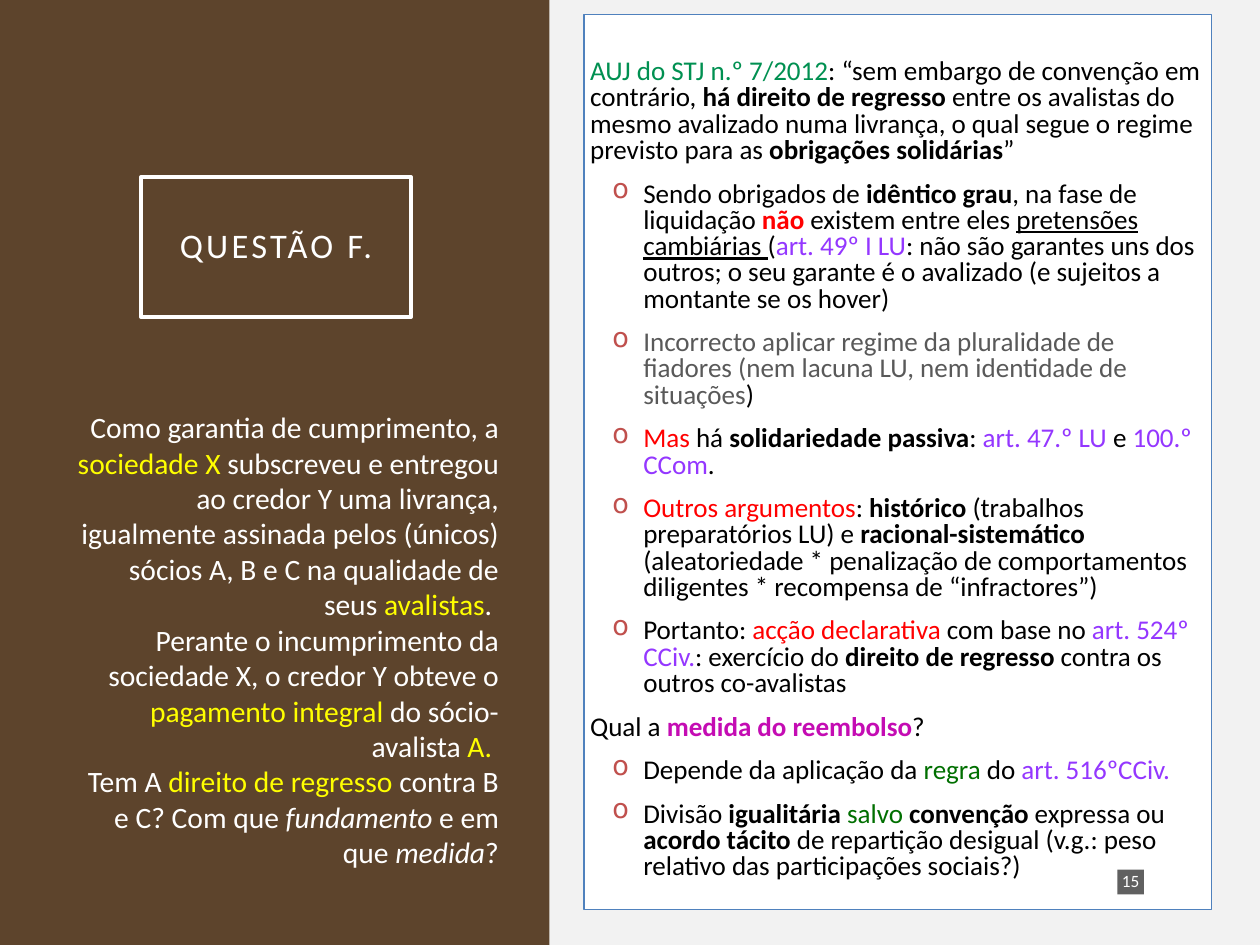
from lxml import etree
from pptx import Presentation
from pptx.dml.color import RGBColor
from pptx.enum.shapes import MSO_SHAPE as Shape
from pptx.enum.text import MSO_ANCHOR as Anchor, PP_ALIGN as Align
from pptx.oxml.ns import qn
from pptx.util import Inches, Pt

FONT = "Calibri"
BROWN, WHITE, BLACK = "5D442C", "FFFFFF", "000000"
RED, PURPLE, YELLOW = "FF0000", "9437FF", "FFFF00"
GREEN, TEAL, GREY, MAGENTA = "006F00", "009051", "595959", "C40CB3"
BULLET_RED = "C0504D"
BOLD, ITALIC, UNDERLINE = "bold", "italic", "underline"

# Each paragraph: (is a bullet, runs); each run: text, or text with styles and colours.
ANSWER = [
    (False, [("AUJ do STJ n.º 7/2012", TEAL), ": “sem embargo de convenção em contrário, ",
             ("há direito de regresso ", BOLD),
             "entre os avalistas do mesmo avalizado numa livrança, "
             "o qual segue o regime previsto para as ",
             ("obrigações solidárias", BOLD), "”"]),
    (True, ["Sendo obrigados de ", ("idêntico grau", BOLD), ", na fase de liquidação ",
            ("não", BOLD, RED), " existem entre eles ",
            ("pretensões cambiárias ", UNDERLINE), "(", ("art. 49º I LU", PURPLE),
            ": não são garantes uns dos outros; o seu garante é o avalizado "
            "(e sujeitos a montante se os hover)"]),
    (True, [("Incorrecto aplicar regime da pluralidade de fiadores "
             "(nem lacuna LU, nem identidade de situações", GREY), ")"]),
    (True, [("Mas", RED), " há ", ("solidariedade passiva", BOLD), ": ",
            ("art. 47.º LU", PURPLE), " e ", ("100.º CCom", PURPLE), "."]),
    (True, [("Outros argumentos", RED), ": ", ("histórico", BOLD),
            " (trabalhos preparatórios LU) e ", ("racional-sistemático", BOLD),
            " (aleatoriedade * penalização de comportamentos diligentes "
            "* recompensa de “infractores”)"]),
    (True, ["Portanto: ", ("acção declarativa ", RED), "com base no ",
            ("art. 524º CCiv.", PURPLE), ": exercício do ",
            ("direito de regresso", BOLD), " contra os outros co-avalistas"]),
    (False, ["Qual a ", ("medida do reembolso", BOLD, MAGENTA), "?"]),
    (True, ["Depende da aplicação da ", ("regra", GREEN), " do ", ("art. 516ºCCiv.", PURPLE)]),
    (True, ["Divisão ", ("igualitária ", BOLD), ("salvo ", GREEN), ("convenção", BOLD),
            " expressa ou ", ("acordo tácito ", BOLD),
            "de repartição desigual (v.g.: peso relativo das participações sociais?)"]),
]

CASE = [
    ["Como garantia de cumprimento, a ", ("sociedade X", YELLOW),
     " subscreveu e entregou ao credor Y uma livrança, igualmente assinada "
     "pelos (únicos) sócios A, B e C na qualidade de seus ", ("avalistas", YELLOW), ". "],
    ["Perante o incumprimento da sociedade X, o credor Y obteve o ",
     ("pagamento integral ", YELLOW), "do sócio-avalista ", ("A. ", YELLOW)],
    ["Tem A ", ("direito de regresso ", YELLOW), "contra B e C? Com que ",
     ("fundamento", ITALIC), " e em que ", ("medida", ITALIC), "?"],
]


def rgb(color):
    return RGBColor.from_string(color)


def add_box(slide, place, fill=None, line=None, line_width=1):
    box = slide.shapes.add_shape(Shape.RECTANGLE, *map(Inches, place))
    box.shadow.inherit = False
    if fill:
        box.fill.solid()
        box.fill.fore_color.rgb = rgb(fill)
    else:
        box.fill.background()
    if line:
        box.line.color.rgb = rgb(line)
        box.line.width = Pt(line_width)
    else:
        box.line.fill.background()
    return box


def set_frame(shape, margin, anchor=Anchor.MIDDLE):
    frame = shape.text_frame
    frame.word_wrap = True
    frame.vertical_anchor = anchor
    frame.margin_left = frame.margin_right = Inches(margin)
    frame.margin_top = frame.margin_bottom = Inches(margin)
    return frame


def add_bullet(paragraph):
    props = paragraph._p.get_or_add_pPr()
    props.set("lvl", "1")
    props.set("marL", str(Inches(0.6)))
    props.set("indent", str(Inches(-0.35)))
    bullet_color = etree.SubElement(props, qn("a:buClr"))
    etree.SubElement(bullet_color, qn("a:srgbClr"), val=BULLET_RED)
    etree.SubElement(props, qn("a:buChar"), char="o")


def add_paragraph(frame, runs, size, color, align=Align.LEFT, spacing=1.0,
                  before=0, bullet=False):
    """Fill the empty first paragraph, or append one with space before it."""
    paragraph = frame.paragraphs[0]
    if paragraph.runs:
        paragraph = frame.add_paragraph()
        paragraph.space_before = Pt(before)
    if bullet:
        add_bullet(paragraph)
    paragraph.alignment = align
    paragraph.line_spacing = spacing
    paragraph.font.name = FONT
    paragraph.font.size = Pt(size)
    paragraph.font.color.rgb = rgb(color)
    for item in runs:
        text, *styles = (item,) if isinstance(item, str) else item
        run = paragraph.add_run()
        run.text = text
        for style in styles:
            if style in (BOLD, ITALIC, UNDERLINE):
                setattr(run.font, style, True)
            else:
                run.font.color.rgb = rgb(style)
    return paragraph


def add_title(slide):
    title = add_box(slide, (1.59, 2, 3.05, 1.58), line=WHITE, line_width=3)
    heading = add_paragraph(set_frame(title, 0.28), ["QUESTÃO F."], 28, WHITE,
                            Align.CENTER, 0.9)
    heading.runs[0].font._element.set("spc", "270")


def add_answer(slide):
    answer = add_box(slide, (6.59, 0.16, 7.08, 10.11), WHITE, "4F81BD")
    frame = set_frame(answer, 0.07)
    frame.margin_top = Inches(0.26)
    for bullet, runs in ANSWER:
        add_paragraph(frame, runs, 22, BLACK, spacing=0.81, before=14, bullet=bullet)


def add_page_number(slide):
    badge = add_box(slide, (12.61, 9.82, 0.3, 0.28), "1D1D1D")
    fill_color = badge._element.spPr.find(qn("a:solidFill"))[0]
    etree.SubElement(fill_color, qn("a:alpha"), val="70000")
    add_paragraph(set_frame(badge, 0.03), ["15"], 14, WHITE, Align.CENTER, 0.9)


def add_case(slide):
    case = slide.shapes.add_textbox(*map(Inches, (0.73, 4.55, 4.97, 5.39)))
    frame = set_frame(case, 0.07, Anchor.TOP)
    for runs in CASE:
        add_paragraph(frame, runs, 24, WHITE, Align.RIGHT)


def main():
    deck = Presentation()
    deck.slide_width, deck.slide_height = Inches(14.22), Inches(10.67)
    slide = deck.slides.add_slide(deck.slide_layouts[6])
    slide.background.fill.solid()
    slide.background.fill.fore_color.rgb = rgb(BROWN)
    add_title(slide)
    add_box(slide, (6.2, 0, 8.02, 10.67), "F2F2F2")
    add_answer(slide)
    add_page_number(slide)
    add_case(slide)
    deck.save("out.pptx")


if __name__ == "__main__":
    main()
